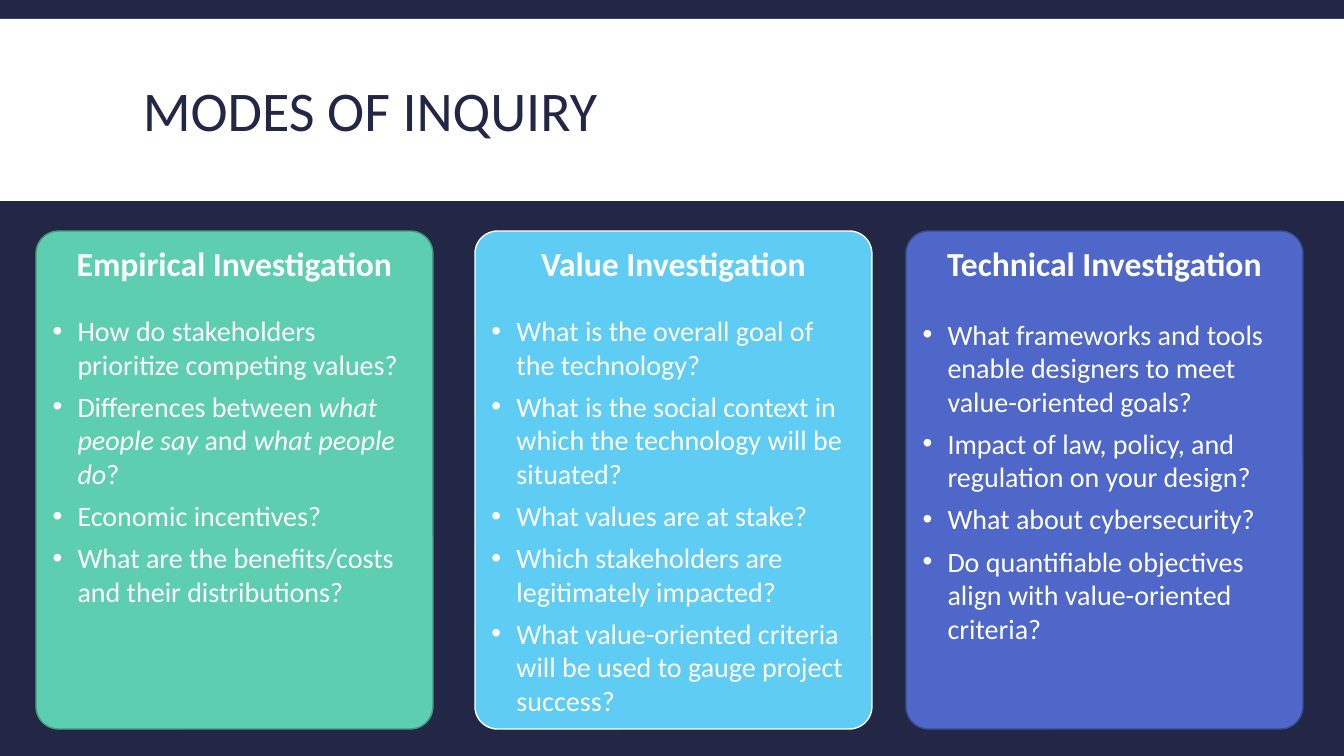
from lxml.etree import SubElement
from pptx import Presentation
from pptx.dml.color import RGBColor
from pptx.enum.shapes import MSO_SHAPE as Shape
from pptx.enum.text import MSO_ANCHOR as Anchor, PP_ALIGN as Align
from pptx.oxml.ns import qn
from pptx.util import Pt

NAVY = RGBColor(0x21, 0x27, 0x45)
WHITE = RGBColor(0xFF, 0xFF, 0xFF)
GREEN = RGBColor(0x5D, 0xCE, 0xAF)
DARK_GREEN = RGBColor(0x45, 0x98, 0x81)
SKY = RGBColor(0x5E, 0xCC, 0xF3)
BLUE = RGBColor(0x4E, 0x67, 0xC8)
DARK_BLUE = RGBColor(0x3A, 0x4C, 0x94)

EMU_PER_PX = 914400 / 100.8
CARD_TOP, CARD_WIDTH, CARD_HEIGHT = 231, 397, 498
INDENT = 25

# left, fill, line, points between heading and list, heading, questions (*italic*)
CARDS = [
    (36, GREEN, DARK_GREEN, 22, "Empirical Investigation", [
        "How do stakeholders prioritize competing values?",
        "Differences between *what people say* and *what people do*?",
        "Economic incentives?",
        "What are the benefits/costs and their distributions?",
    ]),
    (475, SKY, WHITE, 22, "Value Investigation", [
        "What is the overall goal of the technology?",
        "What is the social context in which the technology will be situated?",
        "What values are at stake?",
        "Which stakeholders are legitimately impacted?",
        "What value-oriented criteria will be used to gauge project success?",
    ]),
    (906, BLUE, DARK_BLUE, 24.4, "Technical Investigation", [
        "What frameworks and tools enable designers to meet value-oriented goals?",
        "Impact of law, policy, and regulation on your design?",
        "What about cybersecurity?",
        "Do quantifiable objectives align with value-oriented criteria?",
    ]),
]


def px(length):
    return round(length * EMU_PER_PX)


class SlideBuilder:
    font_name = "Calibri"

    def __init__(self, deck):
        self.slide = deck.slides.add_slide(deck.slide_layouts[6])

    def background(self, color):
        fill = self.slide.background.fill
        fill.solid()
        fill.fore_color.rgb = color

    def style(self, span, size, color, bold=False, italic=False):
        font = span.font
        font.name, font.size = self.font_name, Pt(size)
        font.bold, font.italic = bold, italic
        font.color.rgb = color

    def shape(self, kind, left, top, width, height, fill, line=None):
        box = self.slide.shapes.add_shape(kind, px(left), px(top), px(width), px(height))
        box.shadow.inherit = False
        box.fill.solid()
        box.fill.fore_color.rgb = fill
        if line is None:
            box.line.fill.background()
        else:
            box.line.color.rgb = line
            box.line.width = Pt(1)
        return box

    def title(self, left, top, width, height, text):
        box = self.slide.shapes.add_textbox(px(left), px(top), px(width), px(height))
        frame = box.text_frame
        frame.text = text
        frame.word_wrap = True
        frame.vertical_anchor = Anchor.MIDDLE
        para = frame.paragraphs[0]
        para.line_spacing = 0.85
        self.style(para.runs[0], 40, NAVY)

    def bullet(self, frame, text):
        """Add a bulleted paragraph; parts between asterisks become italic."""
        para = frame.add_paragraph()
        para.alignment = Align.LEFT
        para.space_after = Pt(6)
        for index, part in enumerate(text.split("*")):
            span = para.add_run()
            span.text = part
            self.style(span, 20, WHITE, italic=index % 2 == 1)
        properties = para._p.get_or_add_pPr()
        properties.set("marL", str(px(INDENT)))
        properties.set("indent", str(-px(INDENT)))
        SubElement(properties, qn("a:buFont"), typeface="Arial")
        SubElement(properties, qn("a:buChar"), char="•")

    def card(self, left, fill, line, gap, heading, questions):
        box = self.shape(Shape.ROUNDED_RECTANGLE, left, CARD_TOP, CARD_WIDTH, CARD_HEIGHT, fill, line)
        box.adjustments[0] = 0.057
        frame = box.text_frame
        frame.text = heading
        frame.word_wrap = True
        frame.vertical_anchor = Anchor.TOP
        para = frame.paragraphs[0]
        para.alignment = Align.CENTER
        para.space_after = Pt(gap)
        self.style(para.runs[0], 24, WHITE, bold=True)
        for question in questions:
            self.bullet(frame, question)


def main():
    deck = Presentation()
    deck.slide_width, deck.slide_height = px(1344), px(756)
    builder = SlideBuilder(deck)
    builder.background(NAVY)
    builder.shape(Shape.RECTANGLE, 0, 19, 1344, 182, WHITE)
    builder.title(133, 31, 1079, 166, "MODES OF INQUIRY")
    for card in CARDS:
        builder.card(*card)
    deck.save("out.pptx")


if __name__ == "__main__":
    main()
